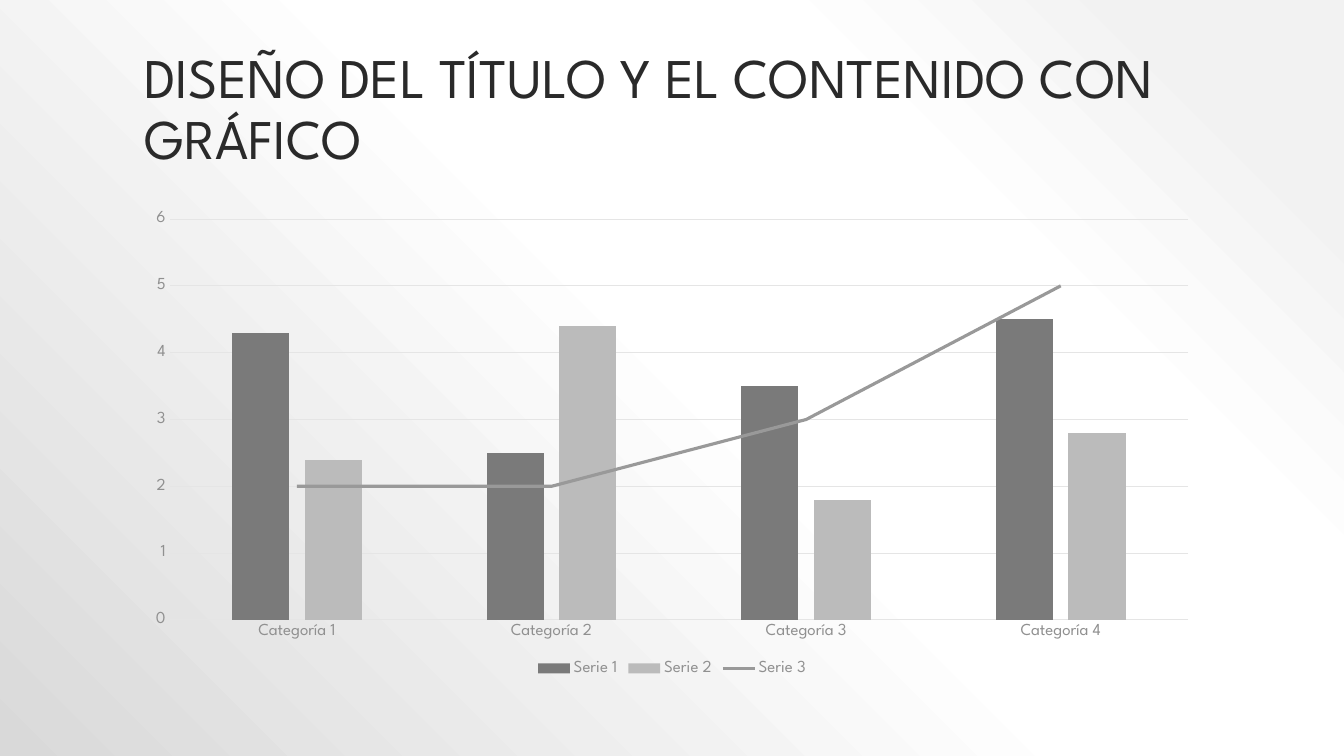
import pptx
import pptx.chart.data
import pptx.dml.color
import pptx.enum.chart
import pptx.enum.text
import pptx.oxml
import pptx.oxml.ns
import pptx.util

Pt = pptx.util.Pt
qn = pptx.oxml.ns.qn
FONT = "League Spartan"
COLORS = {
    "title": "2A2A2A", "text": "545454", "label": "909090", "grid": "E5E5E5",
    "dark": "7A7A7A", "light": "BBBBBB", "trend": "999999",
}
STOPS = [(10, "F2F2F2"), (28, "FFFFFF"), (48, "FFFFFF"), (100, "D9D9D9")]
LEFT, WIDTH = 96, 768


def rgb(name):
    return pptx.dml.color.RGBColor.from_string(COLORS[name])


class Deck:
    def __init__(self):
        self.prs = pptx.Presentation()
        self.prs.slide_width, self.prs.slide_height = Pt(960), Pt(540)
        self.slide = self.prs.slides.add_slide(self.prs.slide_layouts[6])

    def style(self, font, size, color):
        font.name, font.size = FONT, Pt(size)
        font.color.rgb = rgb(color)

    def stroke(self, line, color, width):
        line.color.rgb = rgb(color)
        line.width = Pt(width)

    def backdrop(self, stops):
        """Radial gradient centred on the top right corner."""
        self.slide.background.fill.gradient()
        old = self.slide.element.find(".//" + qn("a:gradFill"))
        marks = "".join(
            f'<a:gs pos="{pos * 1000}"><a:srgbClr val="{hue}"/></a:gs>'
            for pos, hue in stops)
        new = pptx.oxml.parse_xml(
            f'<a:gradFill {pptx.oxml.ns.nsdecls("a")} rotWithShape="1">'
            f'<a:gsLst>{marks}</a:gsLst><a:path path="circle">'
            '<a:fillToRect l="100000" b="100000"/></a:path></a:gradFill>')
        old.getparent().replace(old, new)

    def title(self, text, top, height):
        box = self.slide.shapes.add_textbox(Pt(LEFT), Pt(top), Pt(WIDTH), Pt(height))
        frame = box.text_frame
        frame.word_wrap = True
        frame.vertical_anchor = pptx.enum.text.MSO_ANCHOR.BOTTOM
        frame.text = text
        para = frame.paragraphs[0]
        para.line_spacing = 0.9
        self.style(para.runs[0].font, 40, "title")

    def chart(self, cats, series, top, height):
        data = pptx.chart.data.CategoryChartData()
        data.categories = cats
        for name, vals, _ in series:
            data.add_series(name, vals)
        kind = pptx.enum.chart.XL_CHART_TYPE.COLUMN_CLUSTERED
        chart = self.slide.shapes.add_chart(
            kind, Pt(LEFT), Pt(top), Pt(WIDTH), Pt(height), data).chart
        self.style(chart.font, 10, "text")
        chart.has_title = False

        # Columns and trend line
        self.split(chart)
        bars, trend = chart.plots
        bars.gap_width, bars.overlap = 219, -27
        bars.vary_by_categories = False
        for ser, (_, _, color) in zip(bars.series, series):
            ser.format.fill.solid()
            ser.format.fill.fore_color.rgb = rgb(color)
        line = trend.series[0]
        line.smooth = False
        line.marker.style = pptx.enum.chart.XL_MARKER_STYLE.NONE
        self.stroke(line.format.line, series[-1][2], 2.25)

        # Axes
        for axis in (chart.category_axis, chart.value_axis):
            axis.major_tick_mark = pptx.enum.chart.XL_TICK_MARK.NONE
            axis.minor_tick_mark = pptx.enum.chart.XL_TICK_MARK.NONE
            self.style(axis.tick_labels.font, 12, "label")
        self.stroke(chart.category_axis.format.line, "grid", 0.75)
        values = chart.value_axis
        values.format.line.fill.background()
        values.minimum_scale, values.maximum_scale, values.major_unit = 0, 6, 1
        self.stroke(values.major_gridlines.format.line, "grid", 0.75)

        # Legend
        chart.has_legend = True
        chart.legend.position = pptx.enum.chart.XL_LEGEND_POSITION.BOTTOM
        chart.legend.include_in_layout = False
        self.style(chart.legend.font, 12, "label")

    def split(self, chart):
        """Move the last column series to a line plot on the same axes."""
        plot = chart.plots[0]
        ser = list(plot.series)[-1].format.line and bars_of(chart)[-1]
        bars = ser.getparent()
        for flag in ser.findall(qn("c:invertIfNegative")):
            ser.remove(flag)
        axes = "".join(f'<c:axId val="{a.get("val")}"/>'
                       for a in bars.findall(qn("c:axId")))
        line = pptx.oxml.parse_xml(
            f'<c:lineChart {pptx.oxml.ns.nsdecls("c")}><c:grouping val="standard"/>'
            f'<c:varyColors val="0"/><c:marker val="1"/>{axes}</c:lineChart>')
        line.insert(2, ser)
        bars.addnext(line)


def bars_of(chart):
    return chart.element.findall(".//" + qn("c:barChart") + "/" + qn("c:ser"))


def main():
    deck = Deck()
    deck.backdrop(STOPS)
    deck.title("DISEÑO DEL TÍTULO Y EL CONTENIDO CON GRÁFICO", 21.6, 104.4)
    deck.chart(
        [f"Categoría {n}" for n in range(1, 5)],
        [("Serie 1", (4.3, 2.5, 3.5, 4.5), "dark"),
         ("Serie 2", (2.4, 4.4, 1.8, 2.8), "light"),
         ("Serie 3", (2, 2, 3, 5), "trend")],
        144, 342)
    deck.prs.save("out.pptx")


if __name__ == "__main__":
    main()
